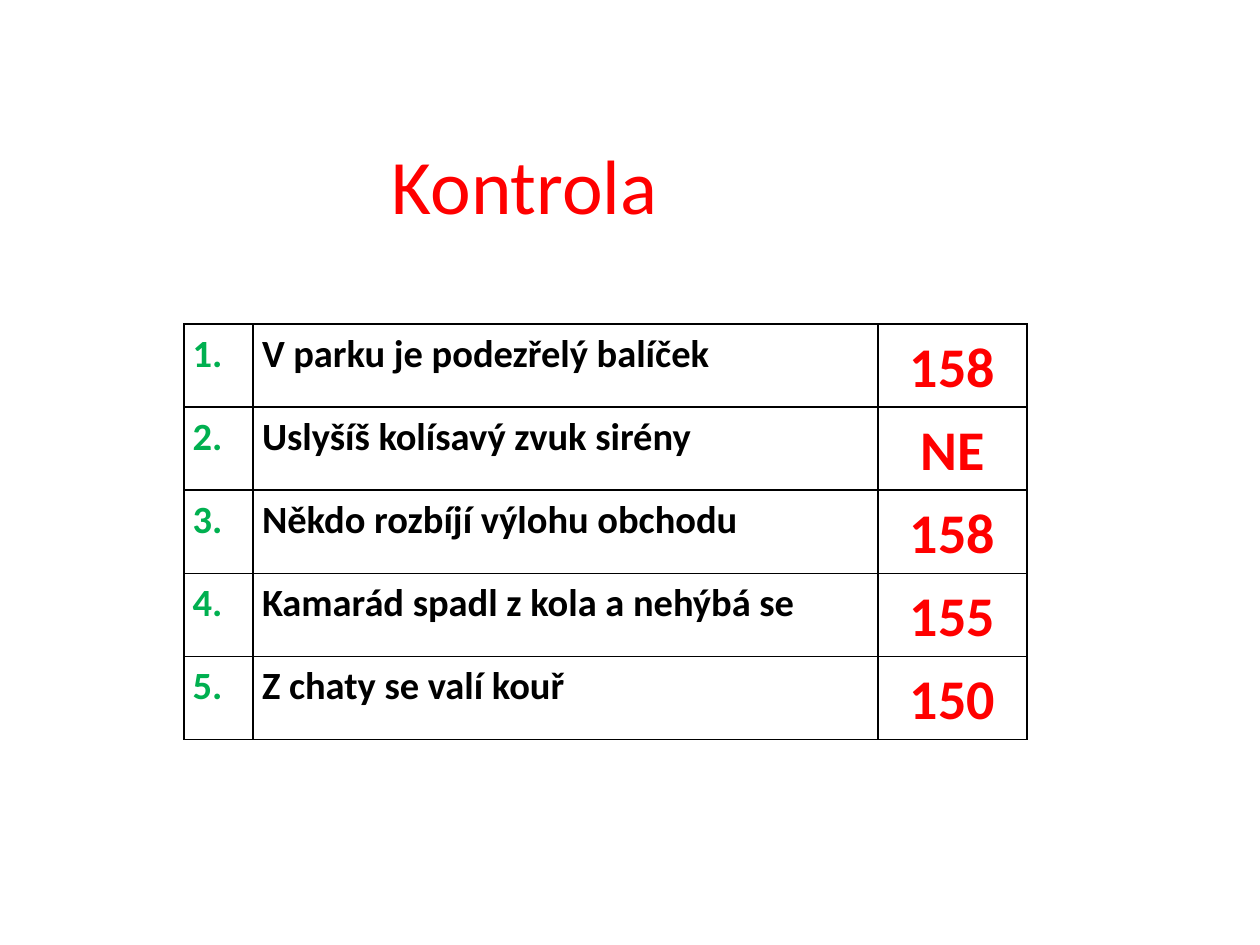
"""Build the answer-check slide: a title and a table of emergency numbers."""
from lxml.etree import SubElement
from pptx import Presentation
from pptx.dml.color import RGBColor
from pptx.enum.text import MSO_ANCHOR, PP_ALIGN
from pptx.oxml.ns import qn
from pptx.util import Inches, Pt

TITLE = "Kontrola"
ANSWERS = [
    ("V parku je podezřelý balíček", "158"),
    ("Uslyšíš kolísavý zvuk sirény", "NE"),
    ("Někdo rozbíjí výlohu obchodu", "158"),
    ("Kamarád spadl z kola a nehýbá se", "155"),
    ("Z chaty se valí kouř", "150"),
]
COLORS = {"answer": "FF0000", "number": "00B050", "situation": "000000", "border": "000000"}
COLUMNS = [
    (0.55, 22, "number", PP_ALIGN.LEFT),
    (4.96, 22, "situation", PP_ALIGN.LEFT),
    (1.18, 32, "answer", PP_ALIGN.CENTER),
]
FONT = "Calibri"
ROW_HEIGHT = 0.66


def style_text(paragraph, size, color, bold=False):
    font = paragraph.runs[0].font
    font.name, font.size, font.bold = FONT, Pt(size), bold
    font.color.rgb = RGBColor.from_string(COLORS[color])


def add_borders(cell):
    properties = cell._tc.get_or_add_tcPr()
    for side in ("a:lnL", "a:lnR", "a:lnT", "a:lnB"):
        line = SubElement(properties, qn(side), w=str(Pt(1)))
        fill = SubElement(line, qn("a:solidFill"))
        SubElement(fill, qn("a:srgbClr"), val=COLORS["border"])


def add_title(slide):
    title = slide.shapes.title
    title.left, title.top, title.width, title.height = map(Inches, (0.43, 0.36, 9.45, 2.19))
    frame = title.text_frame
    frame.text = TITLE
    frame.margin_left = Inches(2.68)
    frame.vertical_anchor = MSO_ANCHOR.MIDDLE
    frame.paragraphs[0].alignment = PP_ALIGN.LEFT
    style_text(frame.paragraphs[0], 44, "answer")


def add_answers(slide):
    width = sum(column[0] for column in COLUMNS)
    answers = slide.shapes.add_table(
        len(ANSWERS), len(COLUMNS), Inches(1.46), Inches(2.57),
        Inches(width), Inches(ROW_HEIGHT * len(ANSWERS))).table
    answers.first_row = answers.horz_banding = False
    for column, (column_width, *_) in zip(answers.columns, COLUMNS):
        column.width = Inches(column_width)
    for row, (situation, answer) in enumerate(ANSWERS):
        texts = (f"{row + 1}.", situation, answer)
        for col, (text, (_, size, color, alignment)) in enumerate(zip(texts, COLUMNS)):
            cell = answers.cell(row, col)
            add_borders(cell)
            cell.fill.background()
            cell.margin_left = cell.margin_right = Inches(0.07)
            cell.margin_top = cell.margin_bottom = 0
            paragraph = cell.text_frame.paragraphs[0]
            paragraph.text = text
            paragraph.alignment, paragraph.line_spacing = alignment, 1.15
            style_text(paragraph, size, color, bold=True)


def main():
    deck = Presentation()
    deck.slide_width, deck.slide_height = Inches(10), Inches(7.5)
    slide = deck.slides.add_slide(deck.slide_layouts[5])
    add_title(slide)
    add_answers(slide)
    deck.save("out.pptx")


if __name__ == "__main__":
    main()
